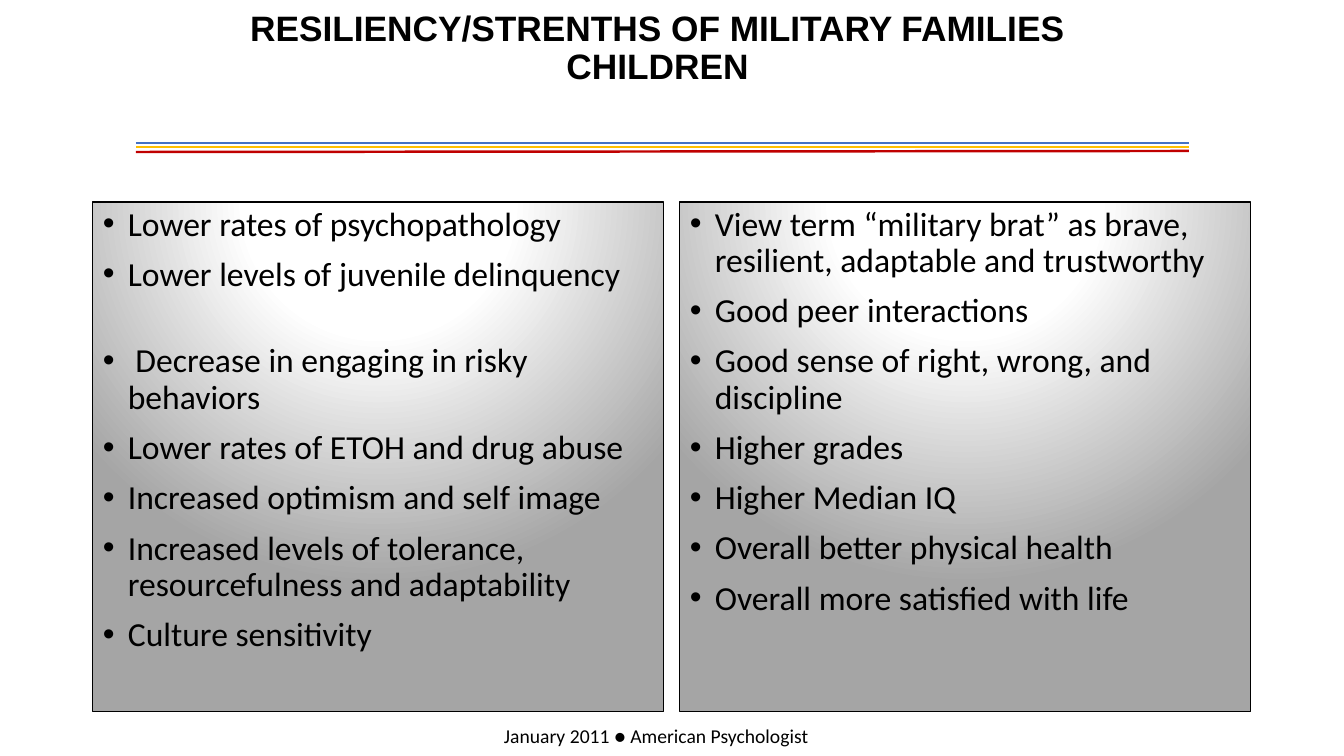
"""Build the slide on the strengths of children in military families."""
from dataclasses import dataclass

from pptx import Presentation
from pptx.dml.color import RGBColor
from pptx.enum.shapes import MSO_CONNECTOR, MSO_SHAPE
from pptx.enum.text import MSO_ANCHOR, MSO_AUTO_SIZE, PP_ALIGN
from pptx.oxml import parse_xml
from pptx.oxml.ns import nsdecls
from pptx.slide import Slide
from pptx.util import Emu, Pt

STRAIGHT = MSO_CONNECTOR.STRAIGHT
RECT = MSO_SHAPE.RECTANGLE
TOP = MSO_ANCHOR.TOP
FIXED = MSO_AUTO_SIZE.NONE
LEFT, CENTER = PP_ALIGN.LEFT, PP_ALIGN.CENTER

BLACK = RGBColor(0, 0, 0)
WHITE = RGBColor(0xFF, 0xFF, 0xFF)
GRAY = RGBColor(0xA5, 0xA5, 0xA5)
BLUE = RGBColor(0x44, 0x72, 0xC4)
GOLD = RGBColor(0xFF, 0xC0, 0x00)
RED = RGBColor(0xC0, 0x00, 0x00)

STOPS = ((0, WHITE), (35, WHITE), (100, GRAY))
INDENT = 25


@dataclass
class Rule:
    """A coloured line under the title."""
    start: int
    end: int
    color: RGBColor


@dataclass
class Point:
    """A bullet and the space before it in points."""
    text: str
    before: int = 10


@dataclass
class Panel:
    """A shaded box of bullets."""
    left: int
    points: list[Point]


RULES = [Rule(143, 143, BLUE), Rule(147, 147, GOLD), Rule(152, 151, RED)]
PANELS = [
    Panel(93, [
        Point("Lower rates of psychopathology", 0),
        Point("Lower levels of juvenile delinquency"),
        Point(" Decrease in engaging in risky behaviors", 36),
        Point("Lower rates of ETOH and drug abuse"),
        Point("Increased optimism and self image"),
        Point("Increased levels of tolerance, resourcefulness and adaptability"),
        Point("Culture sensitivity"),
    ]),
    Panel(680, [
        Point("View term “military brat” as brave, resilient, adaptable and trustworthy", 0),
        Point("Good peer interactions"),
        Point("Good sense of right, wrong, and discipline"),
        Point("Higher grades"),
        Point("Higher Median IQ"),
        Point("Overall better physical health"),
        Point("Overall more satisfied with life"),
    ]),
]


def px(count: int) -> Emu:
    """Turn px into EMU."""
    return Emu(round(count * 914400 / 100.8))


def style(para, name: str, size: float, bold: bool = False) -> None:
    """Set the font of each run in a paragraph."""
    for run in para.runs:
        run.font.name = name
        run.font.size = Pt(size)
        run.font.bold = bold
        run.font.color.rgb = BLACK


def add_title(slide: Slide) -> None:
    """Place and fill the title."""
    title = slide.shapes.title
    title.left, title.top, title.width, title.height = px(100), px(11), px(1115), px(112)
    frame = title.text_frame
    frame.text = "RESILIENCY/STRENTHS OF MILITARY FAMILIES\vCHILDREN"
    frame.word_wrap = True
    frame.auto_size = FIXED
    frame.vertical_anchor = TOP
    frame.margin_top = 0
    para = frame.paragraphs[0]
    para.alignment = CENTER
    para.line_spacing = 0.9
    style(para, "Arial", 25.2, True)


def add_rule(slide: Slide, rule: Rule) -> None:
    """Draw one line under the title."""
    line = slide.shapes.add_connector(
        STRAIGHT, px(136), px(rule.start), px(1189), px(rule.end))
    line.line.color.rgb = rule.color
    line.line.width = Pt(1.75)
    line._element.spPr.append(parse_xml(f"<a:effectLst {nsdecls('a')}/>"))


def shade(shape) -> None:
    """Give a shape the round white to gray fill."""
    stops = "".join(
        f'<a:gs pos="{spot * 1000}"><a:srgbClr val="{color}"/></a:gs>'
        for spot, color in STOPS)
    fill = parse_xml(
        f'<a:gradFill {nsdecls("a")} rotWithShape="1"><a:gsLst>{stops}</a:gsLst>'
        '<a:path path="circle">'
        '<a:fillToRect l="50000" t="-80000" r="50000" b="180000"/>'
        '</a:path></a:gradFill>')
    shape._element.spPr.prstGeom.addnext(fill)


def add_point(para, point: Point) -> None:
    """Fill a paragraph with one bullet."""
    props = para._p.get_or_add_pPr()
    props.set("marL", str(px(INDENT)))
    props.set("indent", str(-px(INDENT)))
    props.append(parse_xml(f'<a:buFont {nsdecls("a")} typeface="Arial"/>'))
    props.append(parse_xml(f'<a:buChar {nsdecls("a")} char="•"/>'))
    para.text = point.text
    para.alignment = LEFT
    para.line_spacing = 0.9
    para.space_before = Pt(point.before)
    style(para, "Calibri", 24)


def add_panel(slide: Slide, panel: Panel) -> None:
    """Draw one box with its bullets."""
    box = slide.shapes.add_shape(RECT, px(panel.left), px(202), px(571), px(510))
    box.shadow.inherit = False
    shade(box)
    box.line.color.rgb = BLACK
    box.line.width = Pt(0.75)
    frame = box.text_frame
    frame.word_wrap = True
    frame.vertical_anchor = TOP
    for index, point in enumerate(panel.points):
        add_point(frame.add_paragraph() if index else frame.paragraphs[0], point)


def add_source(slide: Slide) -> None:
    """Write the journal line at the foot."""
    box = slide.shapes.add_textbox(px(494), px(719), px(328), px(34))
    frame = box.text_frame
    frame.text = "January 2011 ● American Psychologist"
    frame.word_wrap = False
    style(frame.paragraphs[0], "Calibri", 14)


def main() -> None:
    """Build and save the deck."""
    deck = Presentation()
    deck.slide_width, deck.slide_height = px(1344), px(756)
    slide = deck.slides.add_slide(deck.slide_layouts[5])
    for rule in RULES:
        add_rule(slide, rule)
    add_title(slide)
    for panel in PANELS:
        add_panel(slide, panel)
    add_source(slide)
    deck.save("out.pptx")


if __name__ == "__main__":
    main()
